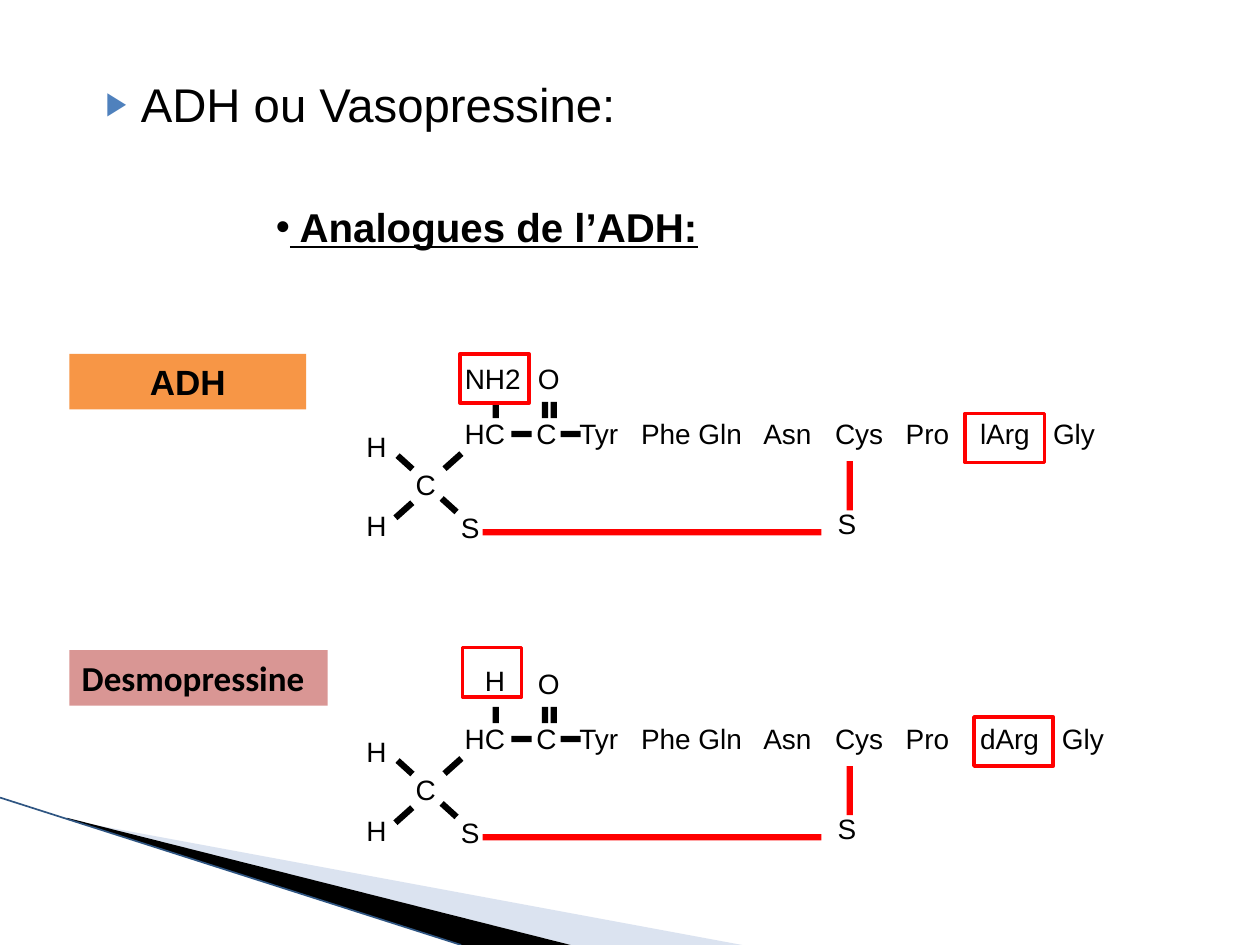
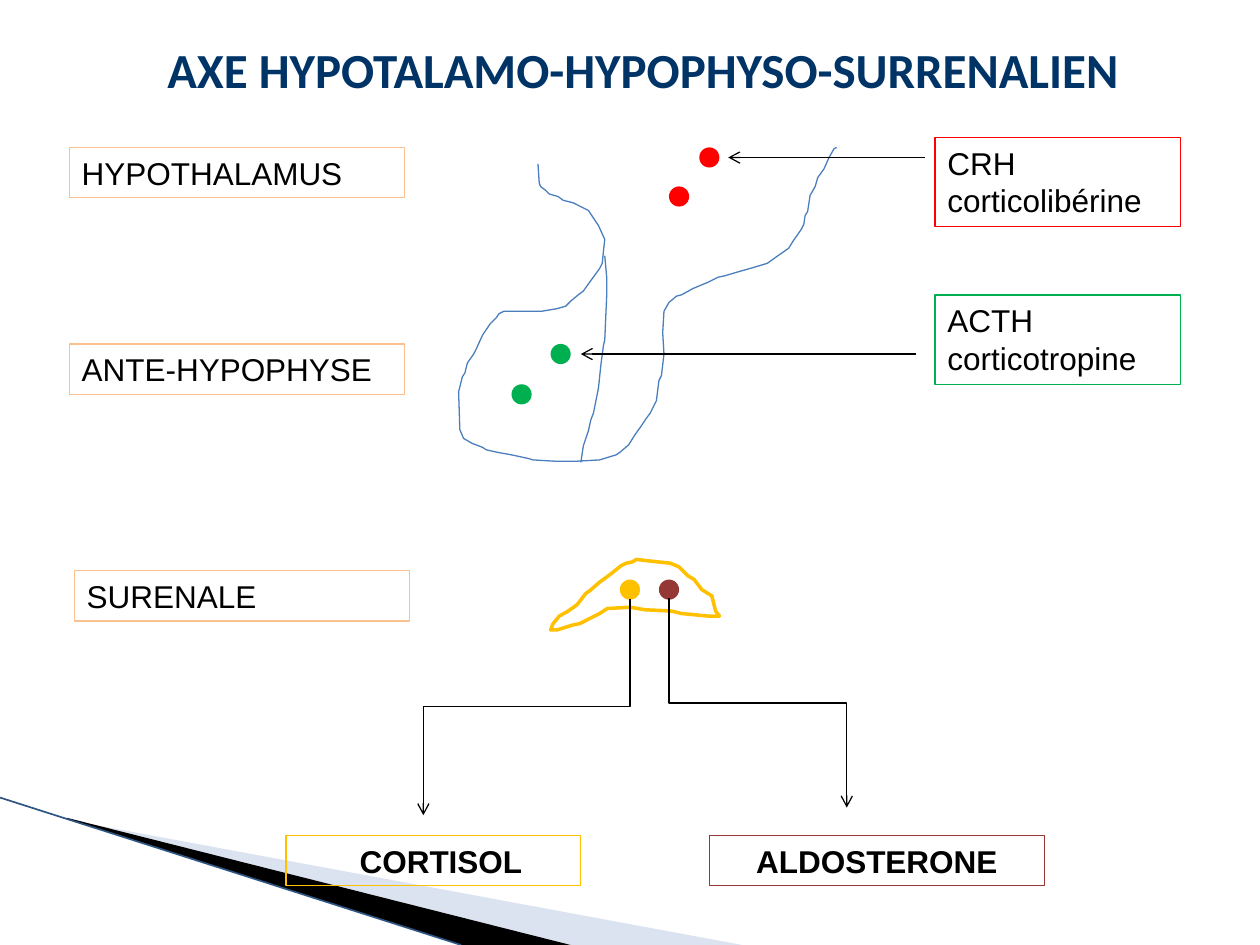
"""Build two slides on vasopressin analogues and the adrenal axis."""
from lxml.etree import SubElement
from pptx import Presentation
from pptx.dml.color import RGBColor
from pptx.enum.shapes import MSO_CONNECTOR, MSO_SHAPE
from pptx.enum.text import MSO_ANCHOR, PP_ALIGN
from pptx.oxml.ns import qn
from pptx.util import Inches, Pt

C = {
    "black": "000000", "red": "FF0000", "green": "00B050", "gold": "FFC000",
    "brown": "953735", "peach": "FAC090", "orange": "F79646", "rose": "D99694",
    "navy": "003366", "accent": "4F81BD", "contour": "4B7EBC",
    "band": "A7B9DB", "edge": "2F5582",
}
BODY = {"name": "Arial", "size": Pt(18), "bold": False}
FORMATS = {
    "body": BODY,
    "strong": BODY | {"bold": True},
    "atom": BODY | {"size": Pt(16)},
    "tag": BODY | {"size": Pt(20), "bold": True},
    "tag2": {"name": "Calibri", "size": Pt(20), "bold": True},
    "topic": BODY | {"size": Pt(27)},
    "subtopic": BODY | {"size": Pt(23), "bold": True, "underline": True},
    "title": {"name": "Calibri", "size": Pt(28), "bold": True},
}

prs = Presentation()
prs.slide_width, prs.slide_height = Inches(10), Inches(7.5)
COLS, ROWS = 100, 75
col, row = prs.slide_width / COLS, prs.slide_height / ROWS


def add_box(s, x, y, w, h, text="", fmt="body", fill=None, line=None, width=0.75,
            kind=MSO_SHAPE.RECTANGLE, color="black", align=PP_ALIGN.LEFT,
            wrap=True, bullet=None, margin=0, indent=0):
    """Place a shape or text box on the grid."""
    at = [round(v) for v in (x * col, y * row, w * col, h * row)]
    if fill or line:
        sp = s.shapes.add_shape(kind, *at)
        sp.shadow.inherit = False
        if fill:
            sp.fill.solid()
            sp.fill.fore_color.rgb = RGBColor.from_string(C[fill])
        else:
            sp.fill.background()
        if line:
            sp.line.color.rgb = RGBColor.from_string(C[line])
            sp.line.width = Pt(width)
        else:
            sp.line.fill.background()
    else:
        sp = s.shapes.add_textbox(*at)
    if not text:
        return sp
    tf = sp.text_frame
    tf.word_wrap = wrap
    tf.vertical_anchor = MSO_ANCHOR.TOP
    for i, words in enumerate(text.split("\n")):
        p = tf.paragraphs[0] if i == 0 else tf.add_paragraph()
        p.alignment = align
        pPr = p._p.get_or_add_pPr()
        pPr.set("marL", str(round(margin * col)))
        pPr.set("indent", str(round(indent * col)))
        if bullet:
            char, tint, share = bullet
            bu = SubElement(pPr, qn("a:buClr"))
            SubElement(bu, qn("a:srgbClr"), val=C[tint])
            SubElement(pPr, qn("a:buSzPct"), val=str(share * 1000))
            SubElement(pPr, qn("a:buFont"), typeface="Arial")
            SubElement(pPr, qn("a:buChar"), char=char)
        r = p.add_run()
        r.text = words
        for name, value in FORMATS[fmt].items():
            setattr(r.font, name, value)
        r.font.color.rgb = RGBColor.from_string(C[color])
    return sp


def add_outline(s, points, fill=None, line=None, width=0.75, close=False):
    """Draw a freeform through grid points."""
    pts = [(x * col, y * row) for x, y in points]
    fb = s.shapes.build_freeform(*pts[0], scale=1.0)
    fb.add_line_segments(pts[1:], close=close)
    sp = fb.convert_to_shape()
    sp.shadow.inherit = False
    if fill:
        sp.fill.solid()
        sp.fill.fore_color.rgb = RGBColor.from_string(C[fill])
    else:
        sp.fill.background()
    if line:
        sp.line.color.rgb = RGBColor.from_string(C[line])
        sp.line.width = Pt(width)
    else:
        sp.line.fill.background()
    return sp


slides = [prs.slides.add_slide(prs.slide_layouts[6]) for _ in range(2)]
for s in slides:
    sp = add_outline(s, [(5.5, 65.1), (58.9, 75), (45.3, 75), (5.5, 65)], "band", close=True)
    tint = sp._element.spPr.find(qn("a:solidFill"))[0]
    SubElement(tint, qn("a:alpha"), val="40000")
    add_outline(s, [(5.3, 64.9), (45.3, 75), (36.6, 75), (5.4, 65)], "black", close=True)
    edge = s.shapes.add_connector(MSO_CONNECTOR.STRAIGHT, 0, round(63.3 * row),
                                  round(36.6 * col), prs.slide_height)
    edge.line.color.rgb = RGBColor.from_string(C["edge"])
    edge.line.width = Pt(0.95)
    SubElement(edge._element.spPr, qn("a:effectLst"))

s = slides[0]
add_box(s, 6.2, 5.5, 45.3, 5.6, "ADH ou Vasopressine:", "topic",
        bullet=("▶", "accent", 68), margin=4, indent=-2.8)
add_box(s, 20.9, 15.6, 36.9, 4.9, " Analogues de l’ADH:", "subtopic",
        wrap=False, bullet=("•", "black", 100))
add_box(s, 5.5, 28.1, 18.8, 4.4, "ADH", "tag", fill="orange", align=PP_ALIGN.CENTER)
add_box(s, 5.5, 51.6, 20.5, 4.4, "Desmopressine", "tag2", fill="rose", wrap=False)

RESIDUES = [("HC", 35.9), ("C", 41.6), ("Tyr", 45), ("Phe Gln", 49.9),
            ("Asn", 59.6), ("Cys", 65.3), ("Pro", 70.9)]
ATOMS = [("C", 32, 36.6), ("H", 28.1, 39.9), ("H", 28.1, 33.6),
         ("O", 41.7, 28.2), ("S", 35.6, 40), ("S", 65.5, 39.7)]
BONDS = [
    (40.6, 34.2, 1.6, 0.5, 0, "black"), (44.5, 34.2, 1.6, 0.5, 0, "black"),
    (39.1, 31.9, 0.5, 1.3, 0, "black"), (43, 31.9, 0.5, 1.3, 0, "black"),
    (43.7, 31.9, 0.5, 1.3, 0, "black"),
    (35.7, 35.7, 0.5, 1.8, 48.2, "black"), (31.8, 39.6, 0.5, 1.8, 48.2, "black"),
    (31.9, 35.9, 0.5, 1.6, 312.2, "black"), (35.4, 39.3, 0.5, 1.6, 312.2, "black"),
    (38.3, 42, 26.9, 0.5, 0, "red"), (67.2, 36.6, 0.5, 3.9, 0, "red"),
]
MOLECULES = [
    (0, [("lArg", 76.8), ("Gly", 82.6)], ("NH2", 35.9, 28.2),
     [(36.5, 28.1, 5.5), (76.6, 32.8, 6.3)]),
    (24.2, [("dArg", 76.8), ("Gly", 83.3)], ("H", 37.5, 52.2),
     [(36.7, 51.4, 4.7), (77.3, 56.9, 6.3)]),
]
for down, tail, (group, gx, gy), frames in MOLECULES:
    for residue, x in RESIDUES + tail:
        add_box(s, x, 32.6 + down, 11 if " " in residue else 7, 3.7, residue, "atom")
    for x, y, w, h, turn, color in BONDS:
        add_box(s, x, y + down, w, h, fill=color).rotation = turn
    for atom, x, y in ATOMS:
        add_box(s, x, y + down, 3.6, 3.7, atom, "atom", wrap=False)
    add_box(s, gx, gy, 6.5 if group == "NH2" else 3.6, 3.7, group, "atom", wrap=False)
    for x, y, w in frames:
        add_box(s, x, y, w, 3.9, line="red", width=2)

s = slides[1]
add_outline(s, [
    (42.7, 13), (42.8, 14.5), (42.9, 14.8), (43.3, 15.1), (43.6, 15.4), (44.3, 15.6),
    (44.7, 15.9), (45.5, 16.1), (46.7, 16.7), (47.1, 17.3), (47.3, 17.6), (47.5, 17.9),
    (48, 19), (47.9, 19.9), (47.8, 20.9), (47.6, 21.3), (46.8, 22.4), (46.3, 23.1),
    (45.9, 23.4), (45.3, 23.9), (44.9, 24.3), (44.2, 24.5), (43, 24.7), (40, 24.7),
    (39.6, 24.9), (39.4, 25.2), (38.9, 25.7), (38.3, 26.6), (37.8, 27.7), (37.6, 28.1),
    (37.1, 28.8), (36.9, 29.6), (36.7, 29.9), (36.4, 31.1), (36.5, 34.1), (36.8, 34.8),
    (37.5, 35.2), (38.3, 35.5), (38.6, 35.7), (39.5, 35.9), (40.6, 36.1), (42, 36.4),
    (42.3, 36.5), (44, 36.6), (45.8, 36.6), (47.6, 36.5), (48.9, 36.1), (49.2, 35.9),
    (49.9, 35.3), (50.4, 34.5), (50.9, 33.8), (51.3, 33.2), (51.6, 32.8), (52.1, 31.8),
    (52.3, 30.2), (52.5, 29.8), (52.7, 28.1), (52.6, 26.4), (52.7, 24.7), (53.1, 24),
    (53.7, 23.5), (54.1, 23.4), (55, 22.9), (56.2, 22.4), (57, 22), (57.5, 21.9),
    (58.5, 21.6), (59.9, 21.2), (60.9, 20.9), (61.6, 20.4), (62.6, 19.7), (62.9, 19.2),
    (63.6, 18.2), (63.8, 17.8), (63.9, 17.1), (64.1, 16.8), (64.3, 15.5), (64.7, 14.8),
    (64.9, 14.1), (65.4, 13.4), (65.8, 12.5), (66.2, 11.8), (66.4, 11.7),
], line="contour")
add_outline(s, [
    (48, 20.3), (48.15, 22), (48.15, 23.5), (48, 27), (47.9, 27.4), (47.7, 28.9),
    (47.5, 30.8), (47.1, 32.8), (46.9, 33.3), (46.7, 34.2), (46.3, 35.4), (46.1, 36.7),
], line="contour")
add_outline(s, [
    (43.7, 50), (43.9, 49.5), (44.4, 48.9), (45.1, 48.5), (45.8, 48), (46.5, 47.1),
    (46.8, 46.9), (47.6, 46.2), (48.3, 45.7), (49.3, 44.9), (49.7, 44.7), (50.2, 44.6),
    (50.5, 44.4), (52.2, 44.6), (53.2, 44.7), (53.9, 45), (54.6, 45.7), (55.1, 46),
    (55.7, 46.8), (56.5, 47.3), (56.8, 48.5), (57.1, 48.9), (56.2, 48.9), (54.1, 48.7),
    (53.3, 48.5), (51.2, 48.4), (50, 48.2), (48.2, 48.3), (47.6, 48.7), (46.8, 49.1),
    (46, 49.5), (45.5, 49.6), (44.2, 50),
], line="gold", width=2, close=True)

add_box(s, 12.3, 2.65, 87.7, 6, "AXE HYPOTALAMO-HYPOPHYSO-SURRENALIEN", "title",
        color="navy")
for text, x, y in [("HYPOTHALAMUS", 5.5, 11.7), ("ANTE-HYPOPHYSE", 5.5, 27.3),
                   ("SURENALE", 5.9, 45.3)]:
    add_box(s, x, y, 26.6, 4, text, line="peach")
for text, y, color in [("CRH\ncorticolibérine", 10.9, "red"),
                       ("ACTH\ncorticotropine", 23.4, "green")]:
    add_box(s, 74.2, y, 19.5, 7.1, text, line=color)
for text, x, w, color, margin, indent in [("CORTISOL", 22.7, 23.4, "gold", 4, -2.8),
                                          ("ALDOSTERONE", 56.3, 26.6, "brown", 0, 0)]:
    add_box(s, x, 66.3, w, 4, text, "strong", line=color, align=PP_ALIGN.CENTER,
            margin=margin, indent=indent)
for x, y, color in [(55.5, 11.7, "red"), (53.1, 14.8, "red"), (43.7, 27.3, "green"),
                    (40.6, 30.5, "green"), (49.2, 46, "gold"), (52.3, 46, "brown")]:
    add_box(s, x, y, 1.6, 1.6, fill=color, kind=MSO_SHAPE.OVAL)

arrows = []
for x1, x2, y in [(73.4, 57.8, 12.5), (72.7, 46.1, 28.1)]:
    arrows.append(s.shapes.add_connector(
        MSO_CONNECTOR.STRAIGHT, *[round(v) for v in (x1 * col, y * row, x2 * col, y * row)]))
for x1, y1, x2, y2 in [(53.1, 47.5, 67.2, 64.1), (50, 47.5, 33.6, 64.7)]:
    side = 1 if x2 < x1 else -1
    cx, cy, half_w, half_h = (x1 + x2) / 2, (y1 + y2) / 2, (y2 - y1) / 2, abs(x2 - x1) / 2
    ends = ((cx - side * half_w) * col, (cy - half_h) * row,
            (cx + side * half_w) * col, (cy + half_h) * row)
    elbow = s.shapes.add_connector(MSO_CONNECTOR.ELBOW, *[round(v) for v in ends])
    turn = 90 if side == 1 else 270
    elbow._element.spPr.find(qn("a:xfrm")).set("rot", str(turn * 60000))
    arrows.append(elbow)
for arrow in arrows:
    arrow.line.color.rgb = RGBColor.from_string(C["black"])
    arrow.line.width = Pt(0.75)
    SubElement(arrow.line._get_or_add_ln(), qn("a:tailEnd"), type="arrow")
    SubElement(arrow._element.spPr, qn("a:effectLst"))

prs.save("out.pptx")
